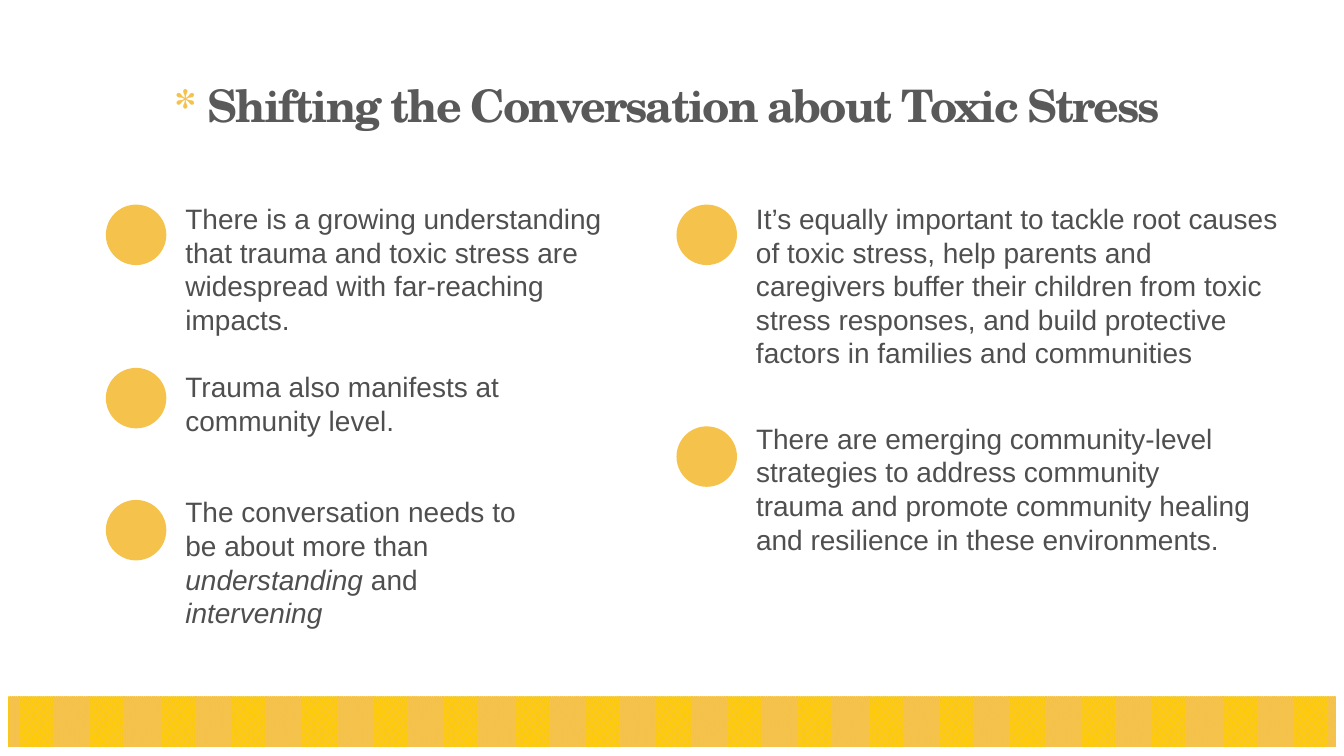
from pptx import Presentation
from pptx.dml.color import RGBColor
from pptx.enum.dml import MSO_PATTERN
from pptx.enum.shapes import MSO_SHAPE as Shape
from pptx.enum.text import MSO_ANCHOR as Anchor, MSO_AUTO_SIZE as AutoSize, PP_ALIGN as Align
from pptx.util import Inches, Pt

AMBER = RGBColor(0xF5, 0xC2, 0x4C)
YELLOW = RGBColor(0xFF, 0xCC, 0x00)
TITLE_GRAY = RGBColor(0x59, 0x59, 0x59)
TEXT_GRAY = RGBColor(0x4F, 0x4F, 0x4F)

LEFT_DOT, RIGHT_DOT = 1.05, 6.71
DOT_SIZE = 0.6
TEXT_OFFSET = 0.69

# Dot left, dot top, text top, text width, text height, spans as (text, italic)
POINTS = [
    (LEFT_DOT, 2.03, 1.95, 4.5, 1.78, [
        ("There is a growing understanding that trauma and toxic stress are "
         "widespread with far-reaching impacts.", False)]),
    (LEFT_DOT, 3.65, 3.62, 3.79, 0.98, [
        ("Trauma also manifests at community level.", False)]),
    (LEFT_DOT, 4.96, 4.86, 3.53, 1.65, [
        ("The conversation needs to be about more than ", False),
        ("understanding", True), (" and ", False), ("intervening", True)]),
    (RIGHT_DOT, 2.03, 1.95, 5.43, 2.12, [
        ("It’s equally important to tackle root causes of toxic stress, help "
         "parents and caregivers buffer their children from toxic stress "
         "responses, and build protective factors in families and communities", False)]),
    (RIGHT_DOT, 4.23, 4.13, 5.11, 1.78, [
        ("There are emerging community-level strategies to address community "
         "trauma and promote community healing and resilience in these "
         "environments.", False)]),
]


def add_plain_shape(page, kind, left, top, width, height):
    """Add a preset shape without shadow or outline."""
    shape = page.shapes.add_shape(
        kind, Inches(left), Inches(top), Inches(width), Inches(height))
    shape.shadow.inherit = False
    shape.line.fill.background()
    return shape


def add_span(para, text, font_name, size, color):
    span = para.add_run()
    span.text = text
    span.font.name = font_name
    span.font.size = Pt(size)
    span.font.color.rgb = color
    return span


def add_band(page):
    band = add_plain_shape(page, Shape.RECTANGLE, 0.08, 6.91, 13.17, 0.5)
    band.fill.patterned()
    band.fill.pattern = MSO_PATTERN.PERCENT_90
    band.fill.fore_color.rgb = AMBER
    band.fill.back_color.rgb = YELLOW


def fill_title(page):
    title = page.shapes.title
    title.left, title.top = Inches(1.63), Inches(0.71)
    title.width, title.height = Inches(10.16), Inches(0.66)
    frame = title.text_frame
    frame.auto_size = AutoSize.NONE
    frame.vertical_anchor = Anchor.MIDDLE
    para = frame.paragraphs[0]
    para.alignment = Align.LEFT
    for text, color in (("* ", AMBER),
                        ("Shifting the Conversation about Toxic Stress", TITLE_GRAY)):
        span = add_span(para, text, "TeX Gyre Schola", 32, color)
        span.font.bold = True
        span._r.get_or_add_rPr().set("spc", "-150")


def add_point(page, dot_left, dot_top, text_top, width, height, spans):
    """Add an amber dot with its statement to the right."""
    dot = add_plain_shape(page, Shape.OVAL, dot_left, dot_top, DOT_SIZE, DOT_SIZE)
    dot.fill.solid()
    dot.fill.fore_color.rgb = AMBER
    box = page.shapes.add_textbox(
        Inches(dot_left + TEXT_OFFSET), Inches(text_top), Inches(width), Inches(height))
    frame = box.text_frame
    frame.word_wrap = True
    frame.auto_size = AutoSize.SHAPE_TO_FIT_TEXT
    for text, italic in spans:
        span = add_span(frame.paragraphs[0], text, "Arial", 20, TEXT_GRAY)
        span.font.italic = italic


def main():
    deck = Presentation()
    deck.slide_width, deck.slide_height = Inches(13.33), Inches(7.5)
    page = deck.slides.add_slide(deck.slide_layouts.get_by_name("Title Only"))
    add_band(page)
    fill_title(page)
    for point in POINTS:
        add_point(page, *point)
    deck.save("out.pptx")


if __name__ == "__main__":
    main()
